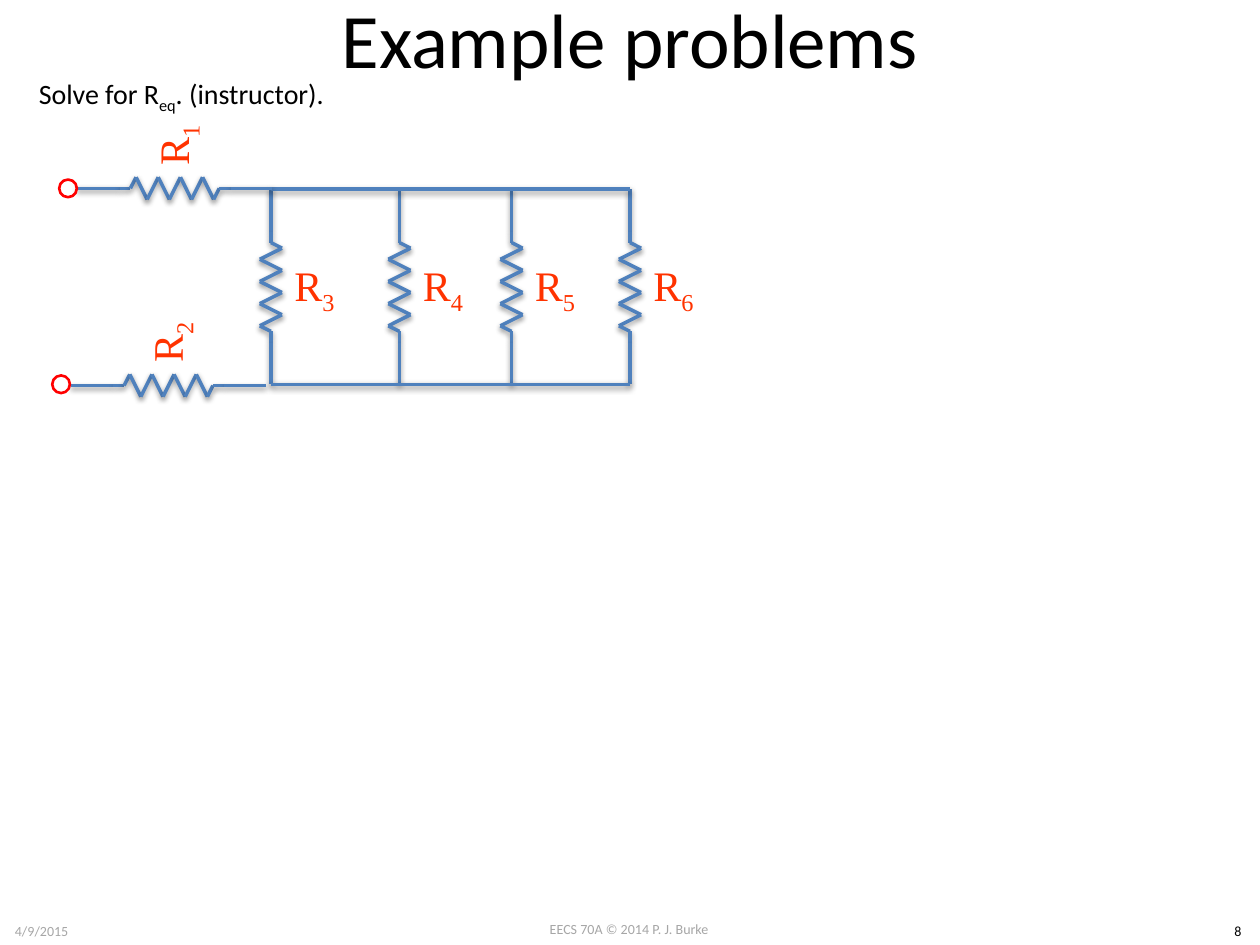
from itertools import pairwise

from lxml import etree
from pptx import Presentation
from pptx.dml.color import RGBColor
from pptx.enum.shapes import MSO_CONNECTOR, MSO_SHAPE
from pptx.enum.text import MSO_ANCHOR, PP_ALIGN
from pptx.oxml.ns import qn
from pptx.util import Inches, Pt

LEFT, CENTER = PP_ALIGN.LEFT, PP_ALIGN.CENTER
TOP, MIDDLE = MSO_ANCHOR.TOP, MSO_ANCHOR.MIDDLE
STRAIGHT, OVAL = MSO_CONNECTOR.STRAIGHT, MSO_SHAPE.OVAL

COLORS = {"wire": "4F81BD", "label": "FF3300", "terminal": "FF0000",
          "text": "000000", "footer": "A6A6A6"}
COLS = 100  # the slide is 100 columns by 75 rows of square cells

# Resistor outline as (along, across) offsets from its first end.
TOOTH, PITCH, LENGTH = 0.88, 0.88, 15.5
ZIGZAG = [(4.7 + i * PITCH, TOOTH if i % 2 == 0 else -TOOTH) for i in range(8)]
OUTLINE = [(0, 0), (3.4, 0), (4.25, 0), *ZIGZAG, (11.3, 0), (12.2, 0), (LENGTH, 0)]
LABEL_AT = (7.85, 3.45)
LABEL_SIZE = (11.9, 7.3)


class Circuit:
    """Draws on one slide, with all lengths in grid cells."""

    def __init__(self, prs):
        self.cell = prs.slide_width / COLS
        self.s = prs.slides.add_slide(prs.slide_layouts[6])

    def cells(self, *values):
        return [round(v * self.cell) for v in values]

    def text(self, text, box, size, color="text", font="Calibri", align=CENTER,
             anchor=TOP, wrap=True, shapes=None):
        """Add a text box; every second part between bars is a subscript."""
        sp = (shapes or self.s.shapes).add_textbox(*self.cells(*box))
        tf = sp.text_frame
        tf.word_wrap = wrap
        tf.vertical_anchor = anchor
        p = tf.paragraphs[0]
        p.alignment = align
        for i, part in enumerate(text.split("|")):
            r = p.add_run()
            r.text = part
            r.font.size = Pt(size)
            r.font.name = font
            r.font.color.rgb = RGBColor.from_string(COLORS[color])
            if i % 2:
                r._r.get_or_add_rPr().set("baseline", "-25000")
        return sp

    def wire(self, start, end, shapes=None):
        sp = (shapes or self.s.shapes).add_connector(
            STRAIGHT, *self.cells(*start, *end))
        sp.line.color.rgb = RGBColor.from_string(COLORS["wire"])
        sp.line.width = Pt(2)
        effects = etree.SubElement(sp._element.spPr, qn("a:effectLst"))
        shadow = etree.SubElement(effects, qn("a:outerShdw"), blurRad="40000",
                                  dist="20000", dir="5400000", rotWithShape="0")
        black = etree.SubElement(shadow, qn("a:srgbClr"), val="000000")
        etree.SubElement(black, qn("a:alpha"), val="38000")

    def resistor(self, number, x, y, horizontal=False):
        """Draw a labelled resistor running down, or right, from (x, y)."""
        def place(along, across):
            return (x + along, y - across) if horizontal else (x + across, y + along)

        shapes = self.s.shapes.add_group_shape().shapes
        w, h = LABEL_SIZE
        cx, cy = place(*LABEL_AT)
        label = self.text(f"R|{number}", (cx - w / 2, cy - h / 2, w, h), 24, "label",
                          "Times New Roman", anchor=MIDDLE, shapes=shapes)
        label.rotation = 270 if horizontal else 0
        for a, b in pairwise(OUTLINE):
            self.wire(place(*a), place(*b), shapes)

    def terminal(self, x, y, size=1.4):
        sp = self.s.shapes.add_shape(OVAL, *self.cells(x, y, size, size))
        sp.shadow.inherit = False
        sp.fill.background()
        sp.line.color.rgb = RGBColor.from_string(COLORS["terminal"])
        sp.line.width = Pt(1.5)


def main():
    prs = Presentation()
    prs.slide_width, prs.slide_height = Inches(10), Inches(7.5)
    c = Circuit(prs)

    c.text("EECS 70A © 2014 P. J. Burke", (38.3, 72.6, 23.3, 2.4), 8, "footer")
    c.text("8", (96.5, 72.7, 3.5, 2.4), 8)
    c.text("4/9/2015", (0.2, 72.7, 20.7, 2.3), 8, "footer", align=LEFT, anchor=MIDDLE)
    c.text("Example problems", (5, -3.3, 90, 12.5), 44, anchor=MIDDLE)
    c.text("Solve for R|eq|. (instructor).", (2.1, 5.6, 26, 3.7), 16,
           align=LEFT, wrap=False)

    top, left, right = 15, 21.5, 50
    bottom = top + LENGTH
    for number, x in zip((3, 4, 5, 6), (left, 31.7, 40.6, right)):
        c.resistor(number, x, top)
    for y in (top, bottom):
        c.wire((left, y), (right, y))
    c.resistor(1, 6.1, 14.95, horizontal=True)
    c.resistor(2, 5.6, 30.6, horizontal=True)
    c.terminal(4.7, 14.25)
    c.terminal(4.15, 29.8)

    prs.save("out.pptx")


if __name__ == "__main__":
    main()
